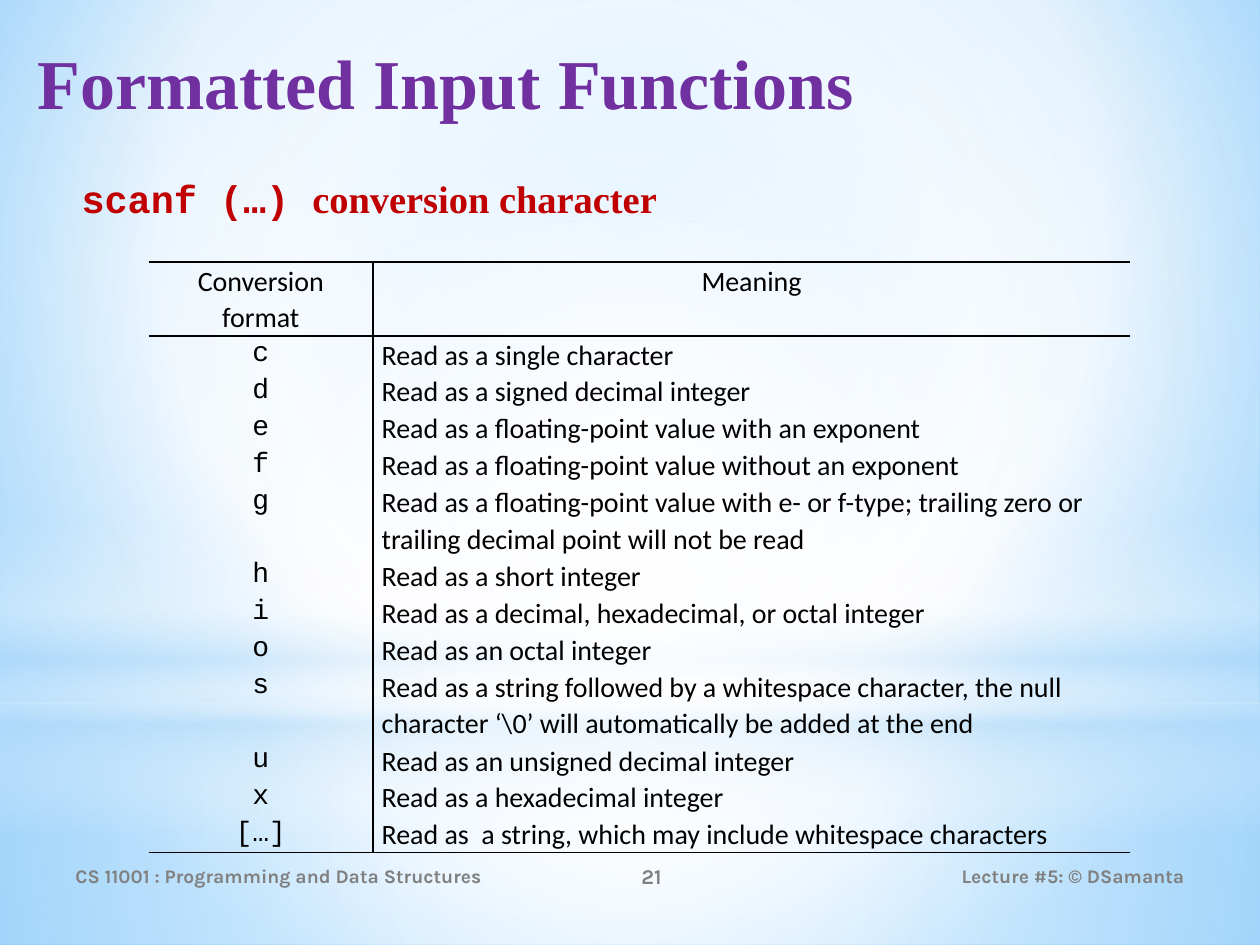
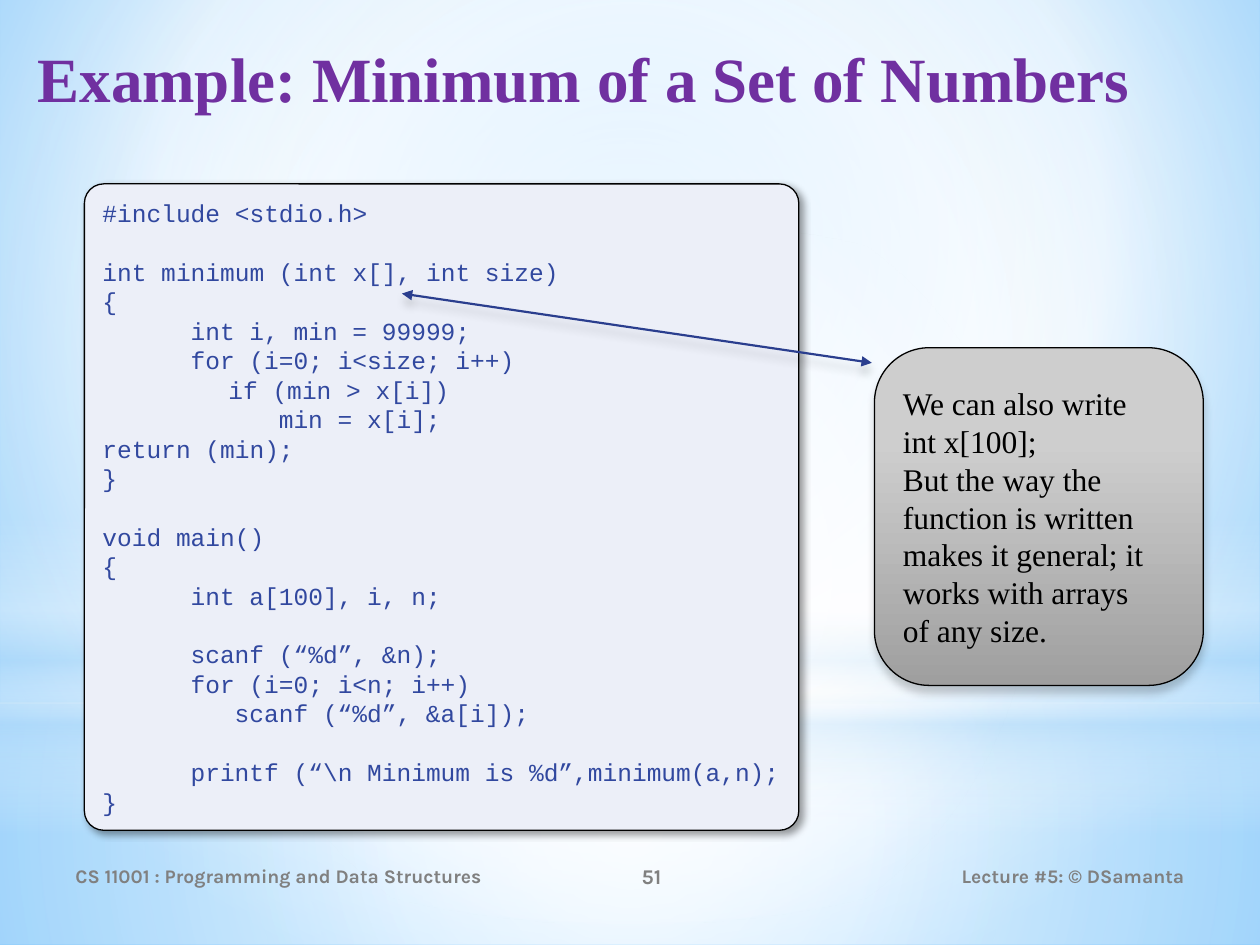
from lxml import etree
from pptx import Presentation
from pptx.dml.color import RGBColor
from pptx.enum.shapes import MSO_CONNECTOR, MSO_SHAPE
from pptx.enum.text import MSO_ANCHOR, PP_ALIGN
from pptx.oxml.ns import qn
from pptx.util import Inches, Pt

RECTANGLE, OVAL = MSO_SHAPE.RECTANGLE, MSO_SHAPE.OVAL
ROUNDED = MSO_SHAPE.ROUNDED_RECTANGLE
STRAIGHT = MSO_CONNECTOR.STRAIGHT
TOP, MIDDLE = MSO_ANCHOR.TOP, MSO_ANCHOR.MIDDLE
LEFT, CENTER, RIGHT = PP_ALIGN.LEFT, PP_ALIGN.CENTER, PP_ALIGN.RIGHT

# Grid: 10 columns by 7.5 rows, each one inch
COLUMNS, ROWS = 10, 7.5
CELL = Inches(1)
DRAWING = "http://schemas.openxmlformats.org/drawingml/2006/main"
PLAIN_TABLE = "{2D5ABB26-0587-4C30-8999-92F81FD0307C}"

BLACK, WHITE, SKY = "000000", "FFFFFF", "B4DCFA"
SERIF, MONO = "Times New Roman", "Courier New"
TITLE = {"name": SERIF, "size": 40, "bold": True, "color": "7030A0"}
LONG_TITLE = {**TITLE, "size": 36}
HEADING = {"name": SERIF, "size": 22, "bold": True, "color": "C00000"}
HEADING_CODE = {**HEADING, "name": MONO}
FOOTER = {"name": "Karla", "size": 11, "bold": True, "color": "808080"}
PAGE_NUMBER = {**FOOTER, "size": 12}
TABLE_TEXT = {"name": "Calibri", "size": 16, "color": BLACK}
TABLE_CODE = {**TABLE_TEXT, "name": MONO}
CODE = {"name": MONO, "size": 14, "color": "31489F"}
NOTE = {"name": SERIF, "size": 18, "color": BLACK}
LINE_PITCH = 1.2

# Gradients: stops as (position, colour, opacity), then focus box or angle
CENTRE = (50, 50, 50, 50)
BACKDROP = ([(0, "9ED5FF", 100), (60, WHITE, 100), (100, "5BB9FF", 100)], (20, 10, 20, 60))
BANDS = [
    (RECTANGLE, (0, 5.58, 10, 1.92), [(0, WHITE, 91), (37, WHITE, 76), (100, SKY, 79)], CENTRE),
    (RECTANGLE, (0, 0, 10, 5.58), [(0, WHITE, 89), (48, WHITE, 62), (100, SKY, 79)], CENTRE),
    (RECTANGLE, (0, 4.12, 10, 2.5), [(0, WHITE, 0), (29, WHITE, 30), (45, SKY, 40),
                                     (55, WHITE, 26), (65, SKY, 60), (100, WHITE, 0)], 90),
    (OVAL, (0, 1.75, 10, 5.58), [(0, WHITE, 100), (56, WHITE, 0)], CENTRE),
]
NOTE_GRADIENT = ([(28, "CECECE", 100), (100, "9F9F9F", 100)], 90)

# Shadows: opacity, blur, distance, angle
CODE_SHADOW = (40, 4, 3, 45)
SOFT_SHADOW = (20, 5, 4, 90)

CONVERSIONS = [
    ("Conversion format", "Meaning", 2),
    ("c", "Read as a single character", 1),
    ("d", "Read as a signed decimal integer", 1),
    ("e", "Read as a floating-point value with an exponent", 1),
    ("f", "Read as a floating-point value without an exponent", 1),
    ("g", "Read as a floating-point value with e- or f-type; trailing zero or "
          "trailing decimal point will not be read", 2),
    ("h", "Read as a short integer", 1),
    ("i", "Read as a decimal, hexadecimal, or octal integer", 1),
    ("o", "Read as an octal integer", 1),
    ("s", "Read as a string followed by a whitespace character, the null "
          "character ‘\\0’ will automatically be added at the end", 2),
    ("u", "Read as an unsigned decimal integer", 1),
    ("x", "Read as a hexadecimal integer", 1),
    ("[…]", "Read as  a string, which may include whitespace characters", 1),
]

# Program lines: text, indent, lines of space above
PROGRAM = [
    ("#include <stdio.h>", 0, 0),
    ("int minimum (int x[], int size)", 0, 1),
    ("{", 0, 0),
    ("int i, min = 99999;", 0.7, 0),
    ("for (i=0; i<size; i++)", 0.7, 0),
    ("if (min > x[i])", 1, 0),
    ("min = x[i];", 1.4, 0),
    ("return (min);", 0, 0),
    ("}", 0, 0),
    ("void main()", 0, 1),
    ("{", 0, 0),
    ("int a[100], i, n;", 0.7, 0),
    ("scanf (“%d”, &n);", 0.7, 1),
    ("for (i=0; i<n; i++)", 0.7, 0),
    ("scanf (“%d”, &a[i]);", 1.05, 0),
    ("printf (“\\n Minimum is %d”,minimum(a,n);", 0.7, 1),
    ("}", 0, 0),
]
NOTE_LINES = ["We can also write", "int x[100];", "But the way the", "function is written",
              "makes it general; it", "works with arrays", "of any size."]


def grid(*lengths):
    return [int(length * CELL) for length in lengths]


def rgb(color):
    return RGBColor.from_string(color)


def add_xml(parent, tag, **attributes):
    values = {name: str(value) for name, value in attributes.items()}
    return etree.SubElement(parent, qn(tag), values)


def add_color(parent, color, opacity=100):
    color_element = add_xml(parent, "a:srgbClr", val=color)
    if opacity < 100:
        add_xml(color_element, "a:alpha", val=opacity * 1000)


def set_gradient(fill, parent, stops, direction):
    fill.background()
    gradient = etree.Element(qn("a:gradFill"), {"rotWithShape": "1"}, nsmap={"a": DRAWING})
    stop_list = add_xml(gradient, "a:gsLst")
    for position, color, opacity in stops:
        add_color(add_xml(stop_list, "a:gs", pos=position * 1000), color, opacity)
    if isinstance(direction, tuple):
        focus = add_xml(gradient, "a:path", path="circle")
        sides = {side: share * 1000 for side, share in zip("ltrb", direction)}
        add_xml(focus, "a:fillToRect", **sides)
    else:
        add_xml(gradient, "a:lin", ang=direction * 60000, scaled=0)
    parent.replace(parent.find(qn("a:noFill")), gradient)


def set_shadow(shape, opacity, blur, distance, angle):
    properties = shape._element.spPr
    effects = properties.find(qn("a:effectLst"))
    if effects is None:
        effects = add_xml(properties, "a:effectLst")
    shadow = add_xml(effects, "a:outerShdw", blurRad=Pt(blur), dist=Pt(distance),
                     dir=angle * 60000, algn="ctr", rotWithShape=0)
    add_color(shadow, BLACK, opacity)


def add_run(paragraph, text, style):
    run = paragraph.add_run()
    run.text = text
    values = {**style, "size": Pt(style["size"])}
    run.font.color.rgb = rgb(values.pop("color"))
    for name, value in values.items():
        setattr(run.font, name, value)


def add_text(slide, box, runs, align=LEFT, anchor=TOP, inset=0.05):
    frame = slide.shapes.add_textbox(*grid(*box)).text_frame
    values = {"word_wrap": True, "vertical_anchor": anchor, "margin_top": Inches(inset)}
    for name, value in values.items():
        setattr(frame, name, value)
    paragraph = frame.paragraphs[0]
    paragraph.alignment = align
    for text, style in runs:
        add_run(paragraph, text, style)


def add_plain_shape(slide, kind, box):
    shape = slide.shapes.add_shape(kind, *grid(*box))
    shape.shadow.inherit = False
    shape.line.fill.background()
    return shape


def add_base(presentation, title, title_style, number):
    slide = presentation.slides.add_slide(presentation.slide_layouts[6])
    # Background and light bands
    background = slide.background.fill
    background.background()
    set_gradient(background, slide._element.cSld.bg.bgPr, *BACKDROP)
    for kind, box, stops, direction in BANDS:
        band = add_plain_shape(slide, kind, box)
        set_gradient(band.fill, band._element.spPr, stops, direction)
    # Title and footers
    add_text(slide, (0.2, 0.21, 9.53, 1.25), [(title, title_style)], inset=0.1)
    footers = [
        (0.5, 3.67, "CS 11001 : Programming and Data Structures", FOOTER, LEFT),
        (4.17, 2, str(number), PAGE_NUMBER, CENTER),
        (6.75, 2.75, "Lecture #5: © DSamanta", FOOTER, RIGHT),
    ]
    for left, width, text, style, align in footers:
        add_text(slide, (left, 6.75, width, 0.4), [(text, style)], align, MIDDLE)
    return slide


def set_borders(cell, sides):
    properties = cell._tc.get_or_add_tcPr()
    for index, side in enumerate(side for side in "LRTB" if side in sides):
        border = etree.Element(qn("a:ln" + side), {"w": str(Pt(1))})
        add_color(add_xml(border, "a:solidFill"), BLACK)
        properties.insert(index, border)


def add_conversion_table(slide, box):
    left, top, width, height = box
    table = slide.shapes.add_table(len(CONVERSIONS), 2, *grid(*box)).table
    table._tbl.tblPr.find(qn("a:tableStyleId")).text = PLAIN_TABLE
    table.first_row = table.horz_banding = False
    format_width = 1.78
    for column, share in zip(table.columns, (format_width, width - format_width)):
        column.width = Inches(share)
    line_height = height / sum(lines for *_, lines in CONVERSIONS)
    margins = {"margin_left": 0.07, "margin_right": 0.07, "margin_top": 0, "margin_bottom": 0}
    last = len(CONVERSIONS) - 1
    for row, (*texts, lines) in enumerate(CONVERSIONS):
        table.rows[row].height = Inches(lines * line_height)
        edges = ("T" if row == 0 else "") + ("B" if row in (0, last) else "")
        for column, text in enumerate(texts):
            cell = table.cell(row, column)
            cell.fill.background()
            for name, value in margins.items():
                setattr(cell, name, Inches(value))
            set_borders(cell, edges + "RL"[column])
            paragraph = cell.text_frame.paragraphs[0]
            paragraph.line_spacing = 1.07
            paragraph.alignment = CENTER if row == 0 or column == 0 else LEFT
            add_run(paragraph, text, TABLE_CODE if row and column == 0 else TABLE_TEXT)


def add_panel(slide, box, lines, style, shadow, right_inset=0.1):
    panel = add_plain_shape(slide, ROUNDED, box)
    panel.line.color.rgb = rgb(BLACK)
    panel.line.width = Pt(0.75)
    set_shadow(panel, *shadow)
    frame = panel.text_frame
    frame.word_wrap = True
    frame.vertical_anchor = MIDDLE
    frame.margin_right = Inches(right_inset)
    pitch = style["size"] * LINE_PITCH
    for index, (text, indent, lines_above) in enumerate(lines):
        paragraph = frame.add_paragraph() if index else frame.paragraphs[0]
        paragraph.alignment = LEFT
        paragraph.line_spacing = Pt(pitch)
        paragraph.space_before = Pt(pitch * lines_above)
        properties = paragraph._p.get_or_add_pPr()
        properties.set("marL", str(Inches(indent)))
        properties.set("indent", "0")
        add_run(paragraph, text, style)
    return panel


def add_double_arrow(slide, start, end):
    arrow = slide.shapes.add_connector(STRAIGHT, *grid(*start, *end))
    arrow.line.color.rgb = rgb("2A3E8E")
    arrow.line.width = Pt(1.25)
    for tag in ("a:headEnd", "a:tailEnd"):
        add_xml(arrow.line._get_or_add_ln(), tag, type="triangle")
    set_shadow(arrow, *SOFT_SHADOW)


def build_conversion_slide(presentation):
    slide = add_base(presentation, "Formatted Input Functions", TITLE, 21)
    heading = [("scanf (…) ", HEADING_CODE), ("conversion character", HEADING)]
    add_text(slide, (0.55, 1.31, 9.1, 0.6), heading, inset=0.08)
    add_conversion_table(slide, (1.18, 2.08, 7.79, 4.69))


def build_minimum_slide(presentation):
    slide = add_base(presentation, "Example: Minimum of a Set of Numbers", LONG_TITLE, 51)
    # Program listing
    program = add_panel(slide, (0.67, 1.46, 5.67, 5.13), PROGRAM, CODE, CODE_SHADOW, 0)
    program.adjustments[0] = 0.03
    program.fill.solid()
    program.fill.fore_color.rgb = rgb("ECEFF8")
    # Side note and its arrow
    note_lines = [(text, 0, 0) for text in NOTE_LINES]
    note = add_panel(slide, (6.94, 2.76, 2.61, 2.68), note_lines, NOTE, SOFT_SHADOW)
    set_gradient(note.fill, note._element.spPr, *NOTE_GRADIENT)
    add_double_arrow(slide, (3.19, 2.33), (6.92, 2.88))


def main():
    presentation = Presentation()
    presentation.slide_width, presentation.slide_height = grid(COLUMNS, ROWS)
    build_conversion_slide(presentation)
    build_minimum_slide(presentation)
    presentation.save("out.pptx")


if __name__ == "__main__":
    main()
